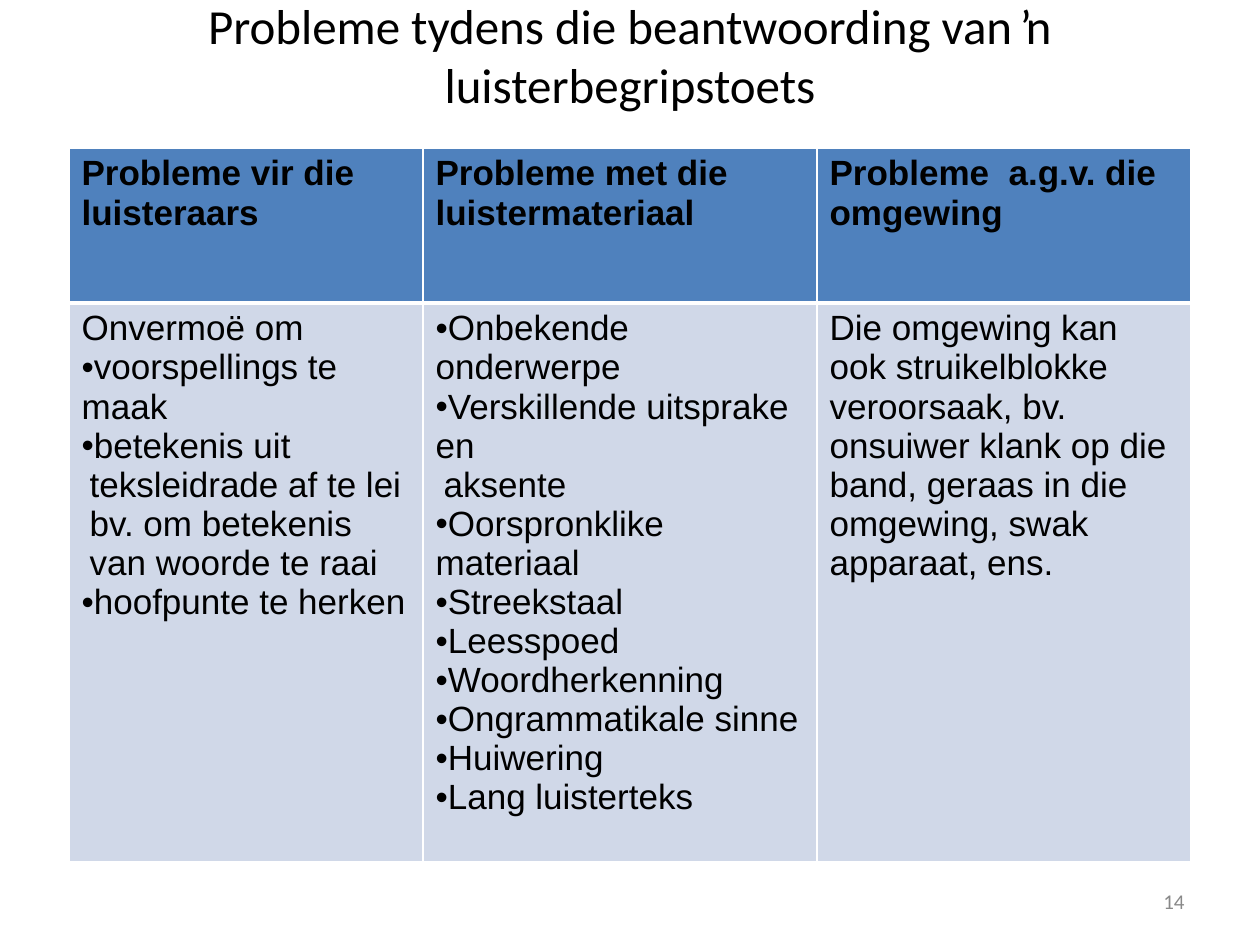
from lxml import etree
from pptx import Presentation
from pptx.dml.color import RGBColor
from pptx.enum.text import MSO_ANCHOR, PP_ALIGN
from pptx.oxml.ns import qn
from pptx.util import Pt

MIDDLE = MSO_ANCHOR.MIDDLE
CENTER, RIGHT = PP_ALIGN.CENTER, PP_ALIGN.RIGHT
BLACK = RGBColor(0x00, 0x00, 0x00)
GREY = RGBColor(0x89, 0x89, 0x89)
WHITE = RGBColor(0xFF, 0xFF, 0xFF)
HEADER_BLUE = RGBColor(0x4F, 0x81, 0xBD)
BODY_BLUE = RGBColor(0xD0, 0xD8, 0xE8)

TITLE = "Probleme tydens die beantwoording van ŉ luisterbegripstoets"
PAGE_NUMBER = "14"
HEADERS = [
    "Probleme vir die luisteraars",
    "Probleme met die luistermateriaal",
    "Probleme  a.g.v. die omgewing",
]
PLAIN, BULLET, HANGING, FIRST_LINE = "plain", "bullet", "hanging", "first line"
BODIES = [
    [
        (PLAIN, "Onvermoë om"),
        (BULLET, "voorspellings te maak"),
        (BULLET, "betekenis uit"),
        (HANGING, "teksleidrade af te lei bv. om betekenis van woorde te raai"),
        (BULLET, "hoofpunte te herken"),
    ],
    [
        (BULLET, "Onbekende onderwerpe"),
        (BULLET, "Verskillende uitsprake en"),
        (FIRST_LINE, "aksente"),
        (BULLET, "Oorspronklike materiaal"),
        (BULLET, "Streekstaal"),
        (BULLET, "Leesspoed"),
        (BULLET, "Woordherkenning"),
        (BULLET, "Ongrammatikale sinne"),
        (BULLET, "Huiwering"),
        (BULLET, "Lang luisterteks"),
    ],
    [
        (PLAIN, "Die omgewing kan ook struikelblokke veroorsaak, bv. onsuiwer "
                "klank op die band, geraas in die omgewing, swak  apparaat, ens."),
    ],
]
INDENTS = {PLAIN: (0, 0), BULLET: (0, 0), HANGING: (8, 0), FIRST_LINE: (0, 8)}
COLUMN_WIDTHS = [354, 394, 374]
ROW_HEIGHTS = [155, 528]
TABLE_LEFT, TABLE_TOP = 69, 148


def px(length):
    return round(length * 914400 / 126)


def style(paragraph, name, size, color, bold=False):
    font = paragraph.font
    font.name, font.size, font.bold = name, Pt(size), bold
    font.color.rgb = color


def add_text(slide, box, text, size, color, alignment):
    frame = slide.shapes.add_textbox(*map(px, box)).text_frame
    frame.word_wrap = True
    frame.vertical_anchor = MIDDLE
    paragraph = frame.paragraphs[0]
    paragraph.text = text
    paragraph.alignment = alignment
    style(paragraph, "Calibri", size, color)


def add_borders(cell, widths):
    properties = cell._tc.get_or_add_tcPr()
    for index, (side, width) in enumerate(widths.items()):
        line = etree.Element(qn(f"a:ln{side}"), w=str(Pt(width)))
        fill = etree.SubElement(line, qn("a:solidFill"))
        etree.SubElement(fill, qn("a:srgbClr"), val=str(WHITE))
        properties.insert(index, line)


def fill_cell(cell, items, color, bold, widths):
    cell.fill.solid()
    cell.fill.fore_color.rgb = color
    add_borders(cell, widths)
    frame = cell.text_frame
    for index, (kind, text) in enumerate(items):
        paragraph = frame.paragraphs[0] if index == 0 else frame.add_paragraph()
        paragraph.text = text
        properties = paragraph._p.get_or_add_pPr()
        margin, indent = INDENTS[kind]
        properties.set("marL", str(px(margin)))
        properties.set("indent", str(px(indent)))
        if kind == BULLET:
            etree.SubElement(properties, qn("a:buFont"), typeface="Arial")
            etree.SubElement(properties, qn("a:buChar"), char="•")
        style(paragraph, "Arial", 20, BLACK, bold)


def add_problem_table(slide):
    table = slide.shapes.add_table(
        len(ROW_HEIGHTS), len(COLUMN_WIDTHS), px(TABLE_LEFT), px(TABLE_TOP),
        px(sum(COLUMN_WIDTHS)), px(sum(ROW_HEIGHTS))).table
    for row, height in zip(table.rows, ROW_HEIGHTS):
        row.height = px(height)
    for column, width in zip(table.columns, COLUMN_WIDTHS):
        column.width = px(width)
    for index, (header, body) in enumerate(zip(HEADERS, BODIES)):
        fill_cell(table.cell(0, index), [(PLAIN, header)], HEADER_BLUE, True,
                  {"L": 1, "R": 1, "T": 1, "B": 3})
        fill_cell(table.cell(1, index), body, BODY_BLUE, False,
                  {"L": 1, "R": 1, "T": 3, "B": 1})


presentation = Presentation()
presentation.slide_width, presentation.slide_height = px(1260), px(945)
slide = presentation.slides.add_slide(presentation.slide_layouts[6])
add_text(slide, (94, 0, 1072, 108), TITLE, 28, BLACK, CENTER)
add_text(slide, (903, 876, 294, 50), PAGE_NUMBER, 12, GREY, RIGHT)
add_problem_table(slide)
presentation.save("out.pptx")
